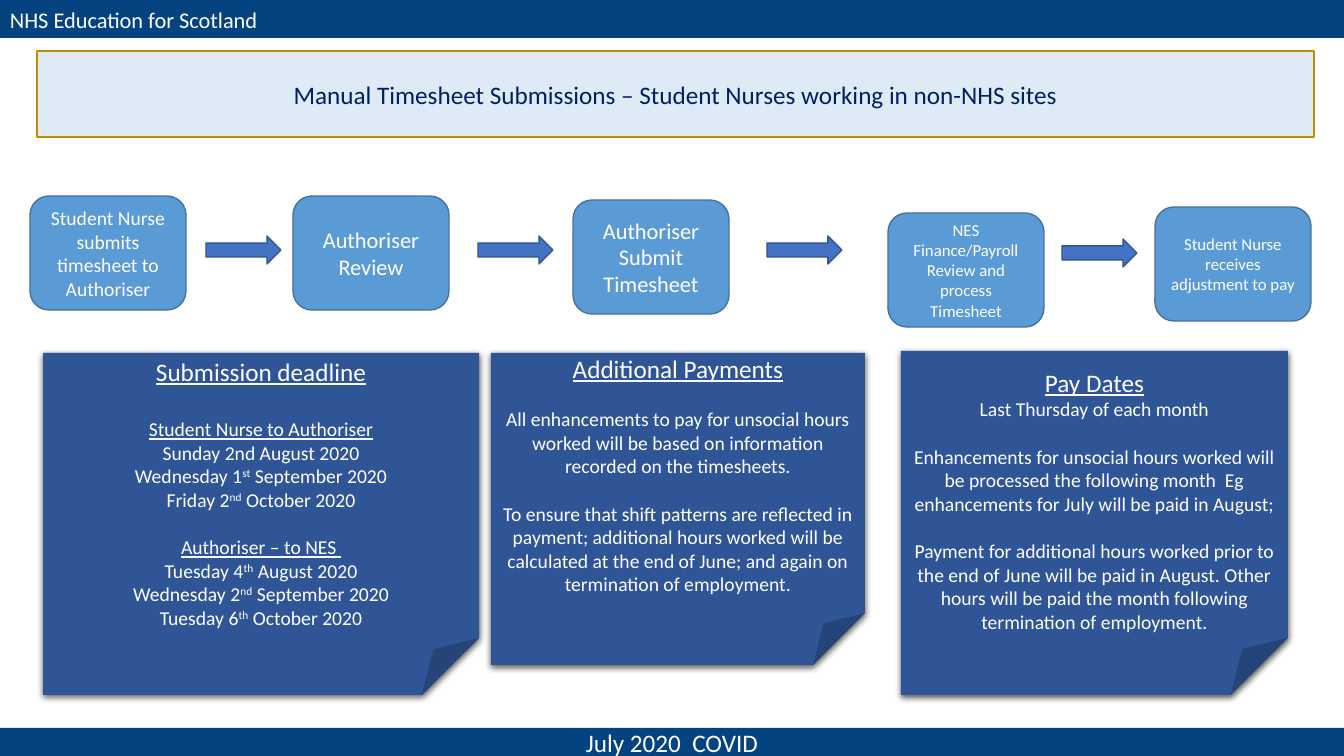
import pptx
import pptx.util
import pptx.dml.color
import pptx.enum.shapes
import pptx.enum.text
import pptx.oxml

PX = 914400 / 100.8
KIND = pptx.enum.shapes.MSO_SHAPE
ANCHOR = pptx.enum.text.MSO_ANCHOR
ALIGN = pptx.enum.text.PP_ALIGN
COLORS = {
    "bar": "044380", "white": "FFFFFF", "navy": "002060",
    "pale": "DEEBF7", "gold": "BD8E00", "step": "5B9BD5", "edge": "43739E",
    "arrow": "4472C4", "rim": "325491", "note": "2F5597",
}
SHADOW = (
    '<a:outerShdw xmlns:a="http://schemas.openxmlformats.org/drawingml/2006/main"'
    ' blurRad="57150" dist="19050" dir="5400000" algn="ctr" rotWithShape="0">'
    '<a:srgbClr val="000000"><a:alpha val="63000"/></a:srgbClr></a:outerShdw>'
)


def add_box(kind, box, fill, line=None):
    shape = slide.shapes.add_shape(kind, *[round(n * PX) for n in box])
    shape.shadow.inherit = False
    shape.fill.solid()
    shape.fill.fore_color.rgb = pptx.dml.color.RGBColor.from_string(COLORS[fill])
    if line:
        shape.line.color.rgb = pptx.dml.color.RGBColor.from_string(COLORS[line])
        shape.line.width = pptx.util.Pt(1)
    else:
        shape.line.fill.background()
    shape.text_frame.word_wrap = True
    shape.text_frame.vertical_anchor = ANCHOR.MIDDLE
    return shape


def write(para, text, size, color="white", align=ALIGN.CENTER, under=False):
    """Fill a paragraph; parts between ^ marks are superscript."""
    para.alignment = align
    for i, part in enumerate(text.split("^")):
        run = para.add_run()
        run.text = part
        if i % 2:
            run.font._element.set("baseline", "30000")
    para.font.name = "Calibri"
    para.font.size = pptx.util.Pt(size)
    para.font.underline = under
    para.font.color.rgb = pptx.dml.color.RGBColor.from_string(COLORS[color])


deck = pptx.Presentation()
deck.slide_width = round(1344 * PX)
deck.slide_height = round(756 * PX)
slide = deck.slides.add_slide(deck.slide_layouts[6])

# Bars and title
foot = add_box(KIND.RECTANGLE, (0, 728, 1344, 28), "bar").text_frame
foot.margin_top = foot.margin_bottom = 0
write(foot.paragraphs[0], "July 2020  COVID", 18)

add_box(KIND.RECTANGLE, (0, 0, 1344, 38), "bar")
head = slide.shapes.add_textbox(0, round(PX), round(428 * PX), round(37 * PX))
head.text_frame.word_wrap = True
write(head.text_frame.paragraphs[0], "NHS Education for Scotland", 16, align=ALIGN.LEFT)

title = add_box(KIND.RECTANGLE, (37, 51, 1277, 86), "pale", "gold")
write(title.text_frame.paragraphs[0],
      "Manual Timesheet Submissions – Student Nurses working in non-NHS sites", 18, "navy")

# Process steps and the arrows between them
steps = [
    (30, 196, 14, "Student Nurse submits timesheet to Authoriser"),
    (293, 196, 16, "Authoriser Review"),
    (573, 200, 16, "Authoriser Submit Timesheet"),
    (888, 213, 12, "NES Finance/Payroll Review and process Timesheet"),
    (1155, 207, 12, "Student Nurse receives adjustment to pay"),
]
for left, top, size, text in steps:
    step = add_box(KIND.ROUNDED_RECTANGLE, (left, top, 156, 114), "step", "edge")
    write(step.text_frame.paragraphs[0], text, size)

for left, top in [(206, 236), (478, 236), (767, 236), (1062, 239)]:
    add_box(KIND.RIGHT_ARROW, (left, top, 75, 28), "arrow", "rim")

# Notes: box, top margin, then lines of (text, size, underline, points before)
notes = [
    ((491, 353, 374, 312), 0, [
        ("Additional Payments", 18, True, 0),
        ("All enhancements to pay for unsocial hours worked will be based on "
         "information recorded on the timesheets.", 14, False, 17),
        ("To ensure that shift patterns are reflected in payment; additional hours "
         "worked will be calculated at the end of June; and again on termination "
         "of employment.", 14, False, 17),
    ]),
    ((43, 353, 436, 342), 3, [
        ("Submission deadline", 18, True, 0),
        ("Student Nurse to Authoriser", 14, True, 22),
        ("Sunday 2nd August 2020", 14, False, 0),
        ("Wednesday 1^st^ September 2020", 14, False, 0),
        ("Friday 2^nd^ October 2020", 14, False, 0),
        ("Authoriser – to NES ", 14, True, 17),
        ("Tuesday 4^th^ August 2020", 14, False, 0),
        ("Wednesday 2^nd^ September 2020", 14, False, 0),
        ("Tuesday 6^th^ October 2020", 14, False, 0),
    ]),
    ((901, 351, 387, 344), 16, [
        ("Pay Dates", 18, True, 0),
        ("Last Thursday of each month", 14, False, 0),
        ("Enhancements for unsocial hours worked will be processed the following "
         "month  Eg enhancements for July will be paid in August;", 14, False, 17),
        ("Payment for additional hours worked prior to the end of June will be paid "
         "in August. Other hours will be paid the month following termination of "
         "employment.", 14, False, 17),
    ]),
]
for box, margin, lines in notes:
    note = add_box(KIND.FOLDED_CORNER, box, "note")
    effects = note._element.spPr.find(pptx.oxml.ns.qn("a:effectLst"))
    effects.append(pptx.oxml.parse_xml(SHADOW))
    frame = note.text_frame
    frame.vertical_anchor = ANCHOR.TOP
    frame.margin_top = round(margin * PX)
    for i, (text, size, under, gap) in enumerate(lines):
        para = frame.add_paragraph() if i else frame.paragraphs[0]
        if gap:
            para.space_before = pptx.util.Pt(gap)
        write(para, text, size, under=under)

deck.save("out.pptx")
